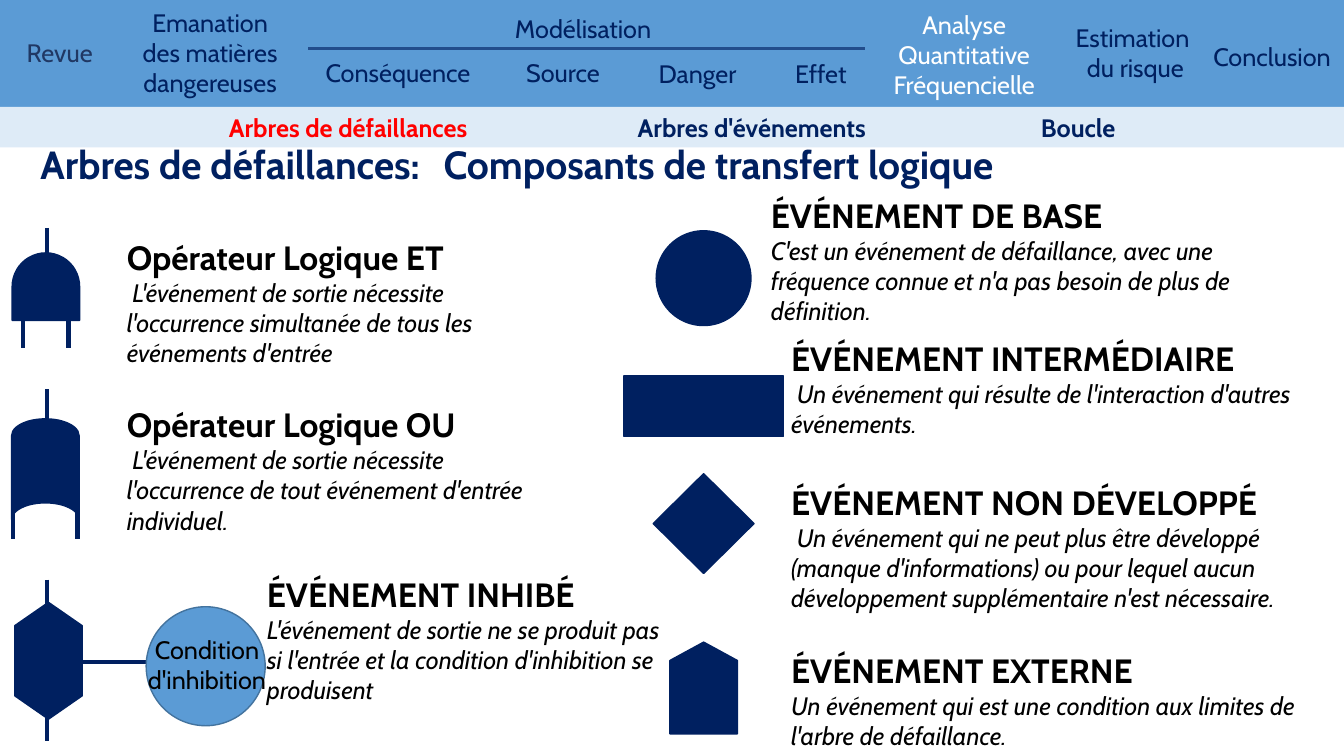
from lxml import etree
from pptx import Presentation
from pptx import util as u
from pptx.dml import color
from pptx.enum import shapes, text
from pptx.oxml import ns

Pt = u.Pt
KIND = shapes.MSO_SHAPE
ALIGN = text.PP_ALIGN
ANCHOR = text.MSO_ANCHOR
FONT = "Cabin"
C = {"navy": "002060", "bar": "5B9BD5", "rim": "43739E", "strip": "DEEBF7", "rule": "224D8C",
     "revue": "203864", "white": "FFFFFF", "black": "000000", "red": "FF0000"}


def rgb(name):
    """Return the named colour."""
    return color.RGBColor.from_string(C[name])


def run(p, words, size, col, bold=False, italic=False):
    """Add a formatted run to a paragraph."""
    r = p.add_run()
    r.text = words
    f = r.font
    f.name, f.size, f.bold, f.italic = FONT, Pt(size), bold, italic
    f.color.rgb = rgb(col)


def tab_stops(p, *stops):
    """Set left tab stops on a paragraph."""
    tabs = etree.SubElement(p._p.get_or_add_pPr(), ns.qn("a:tabLst"))
    for stop in stops:
        etree.SubElement(tabs, ns.qn("a:tab"), pos=str(Pt(stop)), algn="l")


def text_box(s, x, y, w, h):
    """Add a wrapping text box and return its text frame."""
    tf = s.shapes.add_textbox(Pt(x), Pt(y), Pt(w), Pt(h)).text_frame
    tf.word_wrap = True
    return tf


def label(s, box, lines, col="navy", align=ALIGN.CENTER):
    """Add an 18 point label with one paragraph per line."""
    tf = text_box(s, *box)
    for i, line in enumerate(lines.split("\n")):
        p = tf.add_paragraph() if i else tf.paragraphs[0]
        p.alignment = align
        run(p, line, 18, col)


def shape(s, kind, box, fill="navy", line="navy", rot=0):
    """Add a filled preset shape, with no outline if line is None."""
    sp = s.shapes.add_shape(kind, *map(Pt, box))
    sp.shadow.inherit = False
    sp.rotation = rot
    sp.fill.solid()
    sp.fill.fore_color.rgb = rgb(fill)
    if line:
        sp.line.color.rgb = rgb(line)
        sp.line.width = Pt(1)
    else:
        sp.line.fill.background()
    return sp


def symbol(s, kind, cx, cy, w, h, rot=0):
    """Add a navy symbol around a centre point."""
    shape(s, kind, (cx - w / 2, cy - h / 2, w, h), rot=rot)


def line(s, x1, y1, x2, y2, col="navy", width=3):
    """Add a straight line."""
    cn = s.shapes.add_connector(shapes.MSO_CONNECTOR.STRAIGHT, *map(Pt, (x1, y1, x2, y2)))
    cn.line.color.rgb = rgb(col)
    cn.line.width = Pt(width)
    etree.SubElement(cn._element.spPr, ns.qn("a:effectLst"))


def definition(s, x, y, w, h, heading, body):
    """Add a bold heading with an italic definition below it."""
    tf = text_box(s, x, y, w, h)
    run(tf.paragraphs[0], heading, 24, "black", bold=True)
    run(tf.add_paragraph(), body, 18, "black", italic=True)


def nav_bar(s, x, y, w, h):
    """Draw the chapter navigation bar."""
    shape(s, KIND.RECTANGLE, (x, y, w, h), "bar", None)
    label(s, (x + 12, y + 23, 80, 29), "Revue", "revue", ALIGN.LEFT)
    label(s, (x + 625.7, y + 2.9, 126, 69), "Analyse Quantitative Fréquencielle", "white")
    for dx, dy, width, height, words in (
            (91.4, 1.4, 117.4, 72, "Emanation des matières dangereuses"),
            (220.3, 5.8, 392.4, 29, "Modélisation"),
            (220.3, 37.4, 128, 29, "Conséquence"),
            (330.5, 37.4, 143.3, 29, "Source"),
            (439.2, 38.2, 118, 29, "Danger"),
            (523.4, 37.8, 126, 29, "Effet"),
            (748, 12.2, 126, 50, "Estimation \ndu risque"),
            (857.2, 25.9, 102.8, 29, "Conclusion")):
        label(s, (x + dx, y + dy, width, height), words)
    line(s, x + 220.3, y + 34.6, x + 617.8, y + 34.6, "rule", 2.25)


def section_strip(s, x, y, w, h):
    """Draw the strip of sections with the current one in red."""
    tf = shape(s, KIND.RECTANGLE, (x, y, w, h), "strip", None).text_frame
    tf.margin_left = Pt(163.5)
    tf.vertical_anchor = ANCHOR.MIDDLE
    p = tf.paragraphs[0]
    p.alignment = ALIGN.LEFT
    tab_stops(p, 292, 580)
    run(p, "Arbres de défaillances", 18, "red", bold=True)
    run(p, "\tArbres d'événements\tBoucle", 18, "navy", bold=True)


def title(s, x, y, w, h):
    """Place and fill the title placeholder."""
    sp = s.shapes.title
    sp.left, sp.top, sp.width, sp.height = map(Pt, (x, y, w, h))
    tf = sp.text_frame
    tf.auto_size = text.MSO_AUTO_SIZE.NONE
    tf.vertical_anchor = ANCHOR.MIDDLE
    p = tf.paragraphs[0]
    p.alignment = ALIGN.LEFT
    tab_stops(p, 288)
    run(p, "Arbres de défaillances: \tComposants de transfert logique", 28, "navy", bold=True)


def gate(s, x, y, kind, centre, size, rot, stems):
    """Draw a gate body with its input and output stems."""
    for dx, dy in stems:
        line(s, x + dx, y + dy, x + dx, y + dy + 44.3)
    symbol(s, kind, x + centre[0], y + centre[1], *size, rot)


def gates_column(s, x, y):
    """Draw the logic gates and their definitions."""
    gate(s, x, y, KIND.FLOWCHART_DELAY, (32.8, 42), (48.2, 48.2), 270,
         ((33.8, 0), (16.6, 41.8), (49, 41.8)))
    definition(s, x + 83.5, y + 3, 309.6, 101.5, "Opérateur Logique ET ",
               " L'événement de sortie nécessite l'occurrence simultanée de tous les événements d'entrée")
    gate(s, x, y + 115.2, KIND.FLOWCHART_STORED_DATA, (32.4, 57.3), (72, 48.2), 90,
         ((33.8, 0), (9.4, 62.7), (55.4, 62.7)))
    definition(s, x + 83.5, y + 122.4, 303.8, 101.5, "Opérateur Logique OU ",
               " L'événement de sortie nécessite l'occurrence de tout événement d'entrée individuel.")
    line(s, x + 44.6, y + 310.4, x + 138.2, y + 310.4)
    gate(s, x, y + 251.3, KIND.FLOWCHART_PREPARATION, (34.6, 58), (83.5, 48.2), 90,
         ((33.8, 0), (33.8, 71.3)))
    shape(s, KIND.OVAL, (x + 104.4, y + 270.7, 85, 85), "bar", "rim")
    label(s, (x + 91.4, y + 286.6, 113, 51), "Condition d'inhibition", "black")
    definition(s, x + 183.6, y + 243.4, 302.4, 101.5, "ÉVÉNEMENT INHIBÉ",
               "L'événement de sortie ne se produit pas si l'entrée et la condition "
               "d'inhibition se produisent")


def events_column(s, x, y):
    """Draw the event symbols and their definitions."""
    for kind, cy, w, h, rot, dx, dy, width, heading, body in (
            (KIND.OVAL, 63.3, 67.7, 67.7, 0, 98.6, 0, 386.6, "ÉVÉNEMENT DE BASE",
             "C'est un événement de défaillance, avec une fréquence connue et n'a pas "
             "besoin de plus de définition."),
            (KIND.RECTANGLE, 154.8, 113.8, 43.2, 0, 113, 102.2, 401.8, "ÉVÉNEMENT INTERMÉDIAIRE",
             " Un événement qui résulte de l'interaction d'autres événements."),
            (KIND.FLOWCHART_DECISION, 238.6, 72, 71.3, 0, 113, 205.2, 401.8,
             "ÉVÉNEMENT NON DÉVELOPPÉ",
             " Un événement qui ne peut plus être développé (manque d'informations) ou pour "
             "lequel aucun développement supplémentaire n'est nécessaire."),
            (KIND.FLOWCHART_OFFPAGE_CONNECTOR, 356, 48.2, 65.5, 180, 113, 325.4, 401.8,
             "ÉVÉNEMENT EXTERNE",
             "Un événement qui est une condition aux limites de l'arbre de défaillance.")):
        symbol(s, kind, x + 57.6, y + cy, w, h, rot)
        definition(s, x + dx, y + dy, width, 79, heading, body)


def main():
    """Build the slide and save it."""
    prs = Presentation()
    prs.slide_width, prs.slide_height = Pt(960), Pt(540)
    s = prs.slides.add_slide(prs.slide_layouts[5])
    nav_bar(s, 0, 0, 960, 77)
    section_strip(s, 0, 76.3, 960, 29)
    title(s, 21.6, 88.6, 842.4, 57)
    gates_column(s, 0, 162.7)
    events_column(s, 445, 135.4)
    prs.save("out.pptx")


if __name__ == "__main__":
    main()
